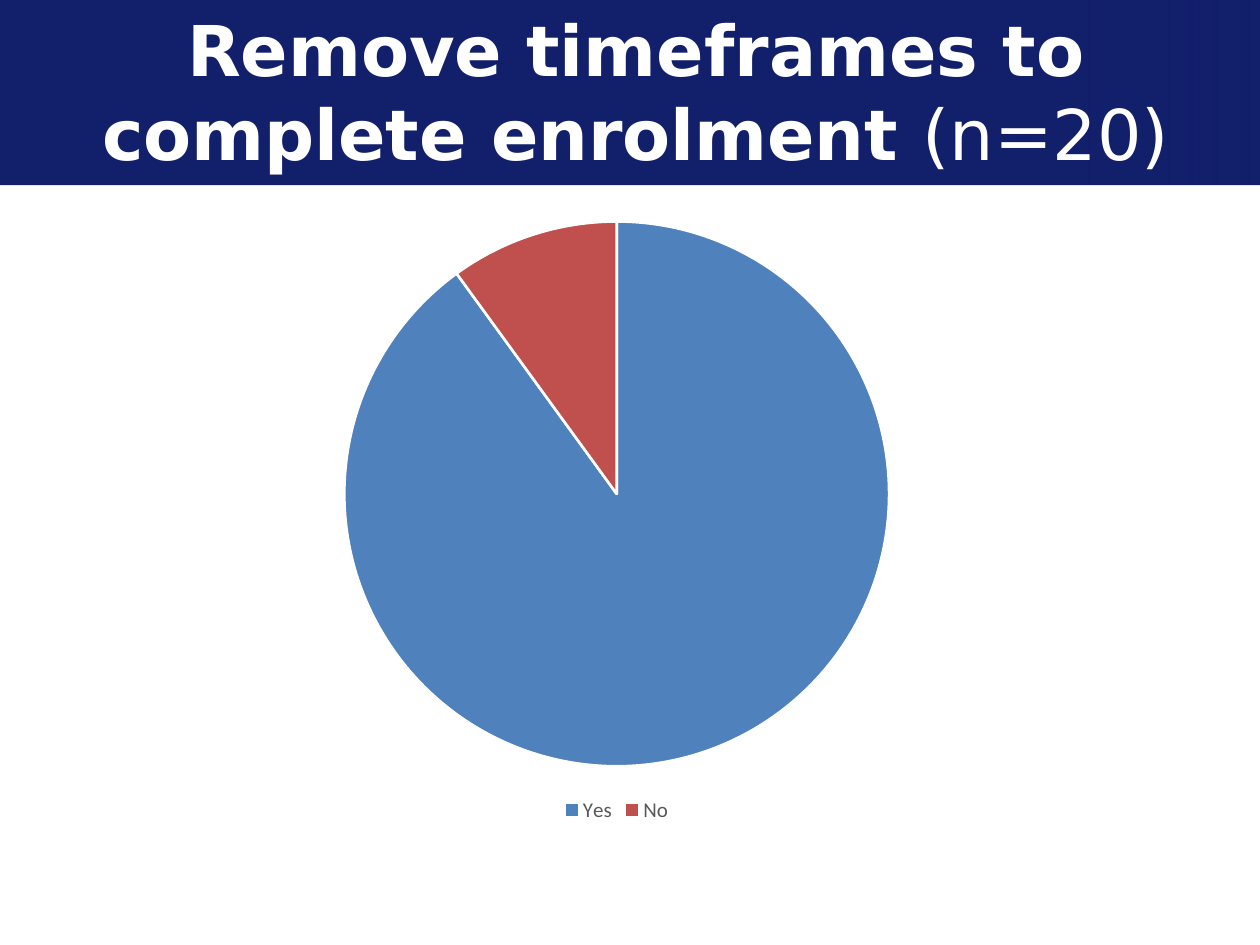
from lxml.etree import SubElement
from pptx import Presentation
from pptx.chart.data import CategoryChartData
from pptx.dml.color import RGBColor
from pptx.enum.chart import XL_CHART_TYPE as ChartType, XL_LEGEND_POSITION as LegendPosition
from pptx.enum.shapes import MSO_SHAPE as Shape
from pptx.enum.text import MSO_ANCHOR as Anchor, MSO_AUTO_SIZE as AutoSize, PP_ALIGN as Align
from pptx.oxml.ns import qn
from pptx.util import Inches, Pt

COLORS = {
    "navy": "121F6B",
    "white": "FFFFFF",
    "yes": "4F81BD",
    "no": "C0504D",
    "legend": "595959",
    "black": "000000",
}
TITLE_FONT = "DejaVu Sans"
CHART_FONT = "Calibri"


def rgb(name):
    return RGBColor.from_string(COLORS[name])


def add_band(slide, left, width, height, layer):
    """Add a navy band at the top edge, placed behind the title."""
    band = slide.shapes.add_shape(
        Shape.RECTANGLE, Inches(left), 0, Inches(width), Inches(height))
    band.shadow.inherit = False
    band.fill.solid()
    band.fill.fore_color.rgb = rgb("navy")
    band.line.fill.background()
    # The first two children of the shape tree are its own properties
    slide.shapes._spTree.insert(2 + layer, band._element)
    return band


def fade(band, stops, angle):
    """Fill a band with navy stops given as (position %, opacity %)."""
    band.fill.gradient()
    band.fill.gradient_angle = angle
    stop_list = band._element.spPr.find(".//" + qn("a:gsLst"))
    for old_stop in list(stop_list):
        stop_list.remove(old_stop)
    for position, opacity in stops:
        stop = SubElement(stop_list, qn("a:gs"), pos=str(position * 1000))
        color = SubElement(stop, qn("a:srgbClr"), val=COLORS["navy"])
        SubElement(color, qn("a:alpha"), val=str(opacity * 1000))


def set_title(slide, parts):
    title = slide.shapes.title
    title.left, title.top = Inches(0.28), Inches(0.21)
    title.width, title.height = Inches(9.53), Inches(1.02)
    frame = title.text_frame
    frame.word_wrap = True
    frame.auto_size = AutoSize.NONE
    frame.vertical_anchor = Anchor.MIDDLE
    paragraph = frame.paragraphs[0]
    paragraph.alignment = Align.CENTER
    for text, bold in parts:
        run = paragraph.add_run()
        run.text = text
        run.font.name = TITLE_FONT
        run.font.size = Pt(40)
        run.font.bold = bold
        run.font.color.rgb = rgb("white")


def style_font(font, size, color):
    font.name = CHART_FONT
    font.size = Pt(size)
    font.color.rgb = rgb(color)


def add_answer_pie(slide, answers):
    """Add a pie of (answer, value, colour) rows with a legend below."""
    data = CategoryChartData()
    data.categories = [answer for answer, _, _ in answers]
    data.add_series("Series 1", [value for _, value, _ in answers])
    chart = slide.shapes.add_chart(
        ChartType.PIE, Inches(0.28), Inches(1.62), Inches(9.23), Inches(4.95), data).chart
    chart.has_title = False
    style_font(chart.font, 10, "black")

    chart.has_legend = True
    chart.legend.position = LegendPosition.BOTTOM
    chart.legend.include_in_layout = False
    style_font(chart.legend.font, 12, "legend")

    pie = chart.plots[0]
    pie.vary_by_categories = True
    for index, (_, _, color) in enumerate(answers):
        slice_format = pie.series[0].points[index].format
        slice_format.fill.solid()
        slice_format.fill.fore_color.rgb = rgb(color)
        slice_format.line.color.rgb = rgb("white")
        slice_format.line.width = Pt(1.5)


def main():
    prs = Presentation()
    prs.slide_width, prs.slide_height = Inches(10), Inches(7.5)
    slide = prs.slides.add_slide(prs.slide_layouts[5])

    # Title banner with a faded right half
    add_band(slide, 0, 10, 1.47, layer=0)
    fade(add_band(slide, 5.08, 4.92, 1.46, layer=1),
         [(0, 66), (36, 95), (77, 100)], angle=180)
    set_title(slide, [("Remove timeframes to complete enrolment ", True),
                      ("(n=20)", False)])

    # Survey answers
    add_answer_pie(slide, [("Yes", 90, "yes"), ("No", 10, "no")])

    prs.save("out.pptx")


if __name__ == "__main__":
    main()
